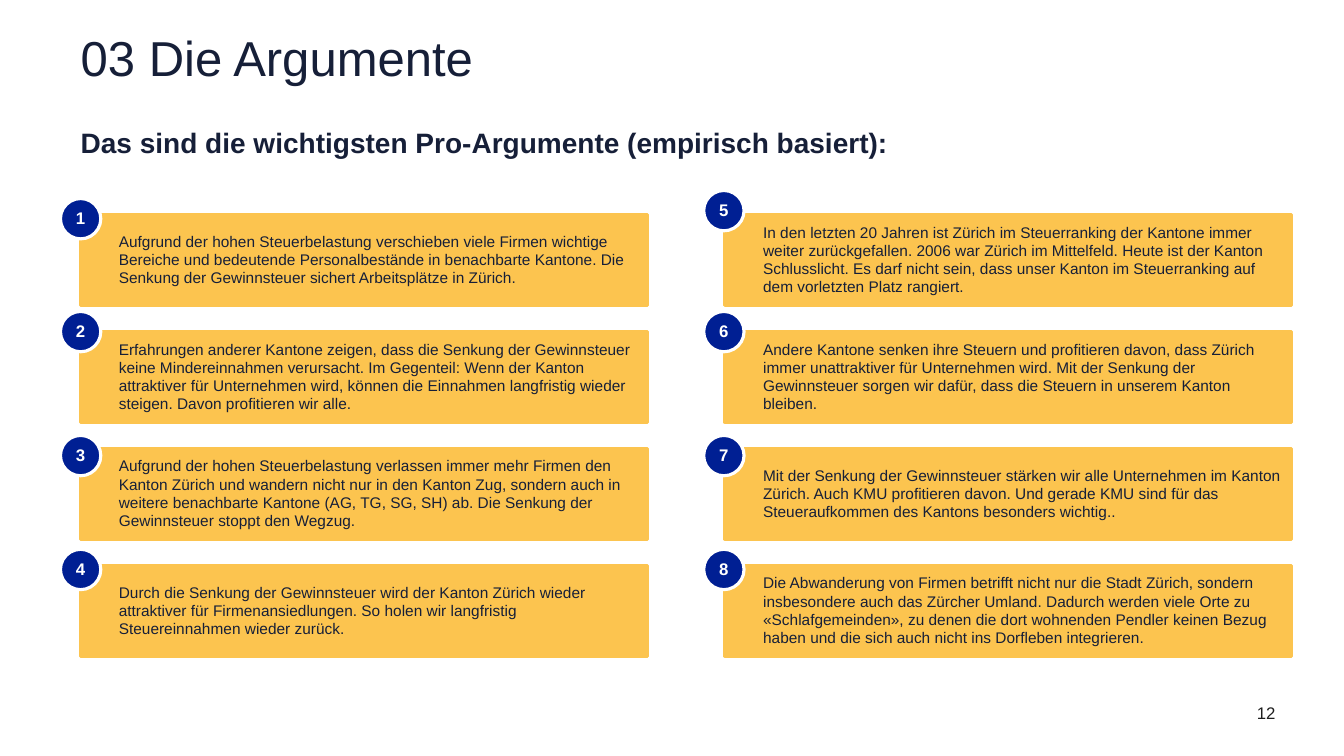
from dataclasses import dataclass

from pptx import Presentation
from pptx import util as u
from pptx.dml.color import RGBColor
from pptx.enum import shapes, text
from pptx.oxml.ns import qn

COLOURS = {
    "ink": "161F38",
    "page_number": "1E1E1E",
    "card": "FCC44F",
    "badge": "001F93",
    "white": "FFFFFF",
}
FONT = "Arial"
CARD_TOP, CARD_PITCH = 2.13, 1.16
CARD_WIDTH, CARD_HEIGHT = 5.62, 0.9
BADGE_SIZE = 0.4
ROWS = 4


@dataclass(frozen=True)
class Column:
    card_left: float
    badge_left: float


@dataclass(frozen=True)
class Argument:
    badge_top: float
    wording: str


COLUMNS = [Column(0.8, 0.6), Column(7.19, 6.98)]

ARGUMENTS = [
    Argument(1.97, "Aufgrund der hohen Steuerbelastung verschieben viele Firmen wichtige "
             "Bereiche und bedeutende Personalbestände in benachbarte Kantone. Die "
             "Senkung der Gewinnsteuer sichert Arbeitsplätze in Zürich."),
    Argument(3.09, "Erfahrungen anderer Kantone zeigen, dass die Senkung der Gewinnsteuer "
             "keine Mindereinnahmen verursacht. Im Gegenteil: Wenn der Kanton "
             "attraktiver für Unternehmen wird, können die Einnahmen langfristig wieder "
             "steigen. Davon profitieren wir alle."),
    Argument(4.32, "Aufgrund der hohen Steuerbelastung verlassen immer mehr Firmen den "
             "Kanton Zürich und wandern nicht nur in den Kanton Zug, sondern auch in "
             "weitere benachbarte Kantone (AG, TG, SG, SH) ab. Die Senkung der "
             "Gewinnsteuer stoppt den Wegzug."),
    Argument(5.45, "Durch die Senkung der Gewinnsteuer wird der Kanton Zürich wieder "
             "attraktiver für Firmenansiedlungen. So holen wir langfristig "
             "Steuereinnahmen wieder zurück."),
    Argument(1.89, "In den letzten 20 Jahren ist Zürich im Steuerranking der Kantone immer "
             "weiter zurückgefallen. 2006 war Zürich im Mittelfeld. Heute ist der Kanton "
             "Schlusslicht. Es darf nicht sein, dass unser Kanton im Steuerranking auf "
             "dem vorletzten Platz rangiert."),
    Argument(3.09, "Andere Kantone senken ihre Steuern und profitieren davon, dass Zürich "
             "immer unattraktiver für Unternehmen wird. Mit der Senkung der "
             "Gewinnsteuer sorgen wir dafür, dass die Steuern in unserem Kanton bleiben."),
    Argument(4.32, "Mit der Senkung der Gewinnsteuer stärken wir alle Unternehmen im Kanton "
             "Zürich. Auch KMU profitieren davon. Und gerade KMU sind für das "
             "Steueraufkommen des Kantons besonders wichtig.."),
    Argument(5.45, "Die Abwanderung von Firmen betrifft nicht nur die Stadt Zürich, sondern "
             "insbesondere auch das Zürcher Umland. Dadurch werden viele Orte zu "
             "«Schlafgemeinden», zu denen die dort wohnenden Pendler keinen Bezug "
             "haben und die sich auch nicht ins Dorfleben integrieren."),
]


def colour(name: str) -> RGBColor:
    return RGBColor.from_string(COLOURS[name])


def place(box, left: float, top: float, width: float, height: float) -> None:
    box.left, box.top = u.Inches(left), u.Inches(top)
    box.width, box.height = u.Inches(width), u.Inches(height)


def write(box, wording: str, size: float, ink: str, bold: bool = False,
          align=text.PP_ALIGN.LEFT, anchor=text.MSO_ANCHOR.TOP,
          spacing: float = 0.99, inset: bool = False, indent: float = 0) -> None:
    """Fill the box with one paragraph of a single run."""
    frame = box.text_frame
    frame.word_wrap = True
    frame.auto_size = text.MSO_AUTO_SIZE.NONE
    frame.vertical_anchor = anchor
    if not inset:
        frame.margin_left = frame.margin_right = 0
        frame.margin_top = frame.margin_bottom = 0

    para = frame.paragraphs[0]
    para.alignment = align
    para.line_spacing = spacing
    para.space_before = u.Pt(0)
    props = para._p.get_or_add_pPr()
    props.set("marL", str(u.Inches(indent)))
    props.set("indent", "0")
    props.append(props.makeelement(qn("a:buNone"), {}))

    span = para.add_run()
    span.text = wording
    span.font.name = FONT
    span.font.size = u.Pt(size)
    span.font.bold = bold
    span.font.color.rgb = colour(ink)


def add_panel(page, kind, left: float, top: float, width: float, height: float,
              fill: str, line: str):
    panel = page.shapes.add_shape(kind, u.Inches(left), u.Inches(top),
                                  u.Inches(width), u.Inches(height))
    panel.shadow.inherit = False
    panel.fill.solid()
    panel.fill.fore_color.rgb = colour(fill)
    panel.line.color.rgb = colour(line)
    panel.line.width = u.Pt(2.25)
    return panel


def main() -> None:
    deck = Presentation()
    deck.slide_width, deck.slide_height = u.Inches(13.33), u.Inches(7.5)
    page = deck.slides.add_slide(deck.slide_layouts[1])

    # Title and subtitle
    title, subtitle = page.shapes.title, page.placeholders[1]
    place(title, 0.8, 0.32, 10.74, 0.53)
    write(title, "03 Die Argumente", 35, "ink", spacing=0.95)
    place(subtitle, 0.8, 1.26, 9.9, 0.38)
    write(subtitle, "Das sind die wichtigsten Pro-Argumente (empirisch basiert):",
          20, "ink", bold=True)

    # Page number
    page_number = page.shapes.add_textbox(u.Inches(11.84), u.Inches(6.98),
                                          u.Inches(0.81), u.Inches(0.23))
    write(page_number, "12", 12, "page_number", align=text.PP_ALIGN.RIGHT)

    # Argument cards with numbered badges, filled column by column
    for index, argument in enumerate(ARGUMENTS):
        column, row = COLUMNS[index // ROWS], index % ROWS
        card = add_panel(page, shapes.MSO_SHAPE.RECTANGLE, column.card_left,
                         CARD_TOP + row * CARD_PITCH, CARD_WIDTH, CARD_HEIGHT,
                         "card", "card")
        write(card, argument.wording, 11, "ink", anchor=text.MSO_ANCHOR.MIDDLE,
              inset=True, indent=0.28)
        badge = add_panel(page, shapes.MSO_SHAPE.OVAL, column.badge_left,
                          argument.badge_top, BADGE_SIZE, BADGE_SIZE, "badge", "white")
        write(badge, str(index + 1), 12, "white", bold=True,
              align=text.PP_ALIGN.CENTER, anchor=text.MSO_ANCHOR.MIDDLE)

    deck.save("out.pptx")


if __name__ == "__main__":
    main()
